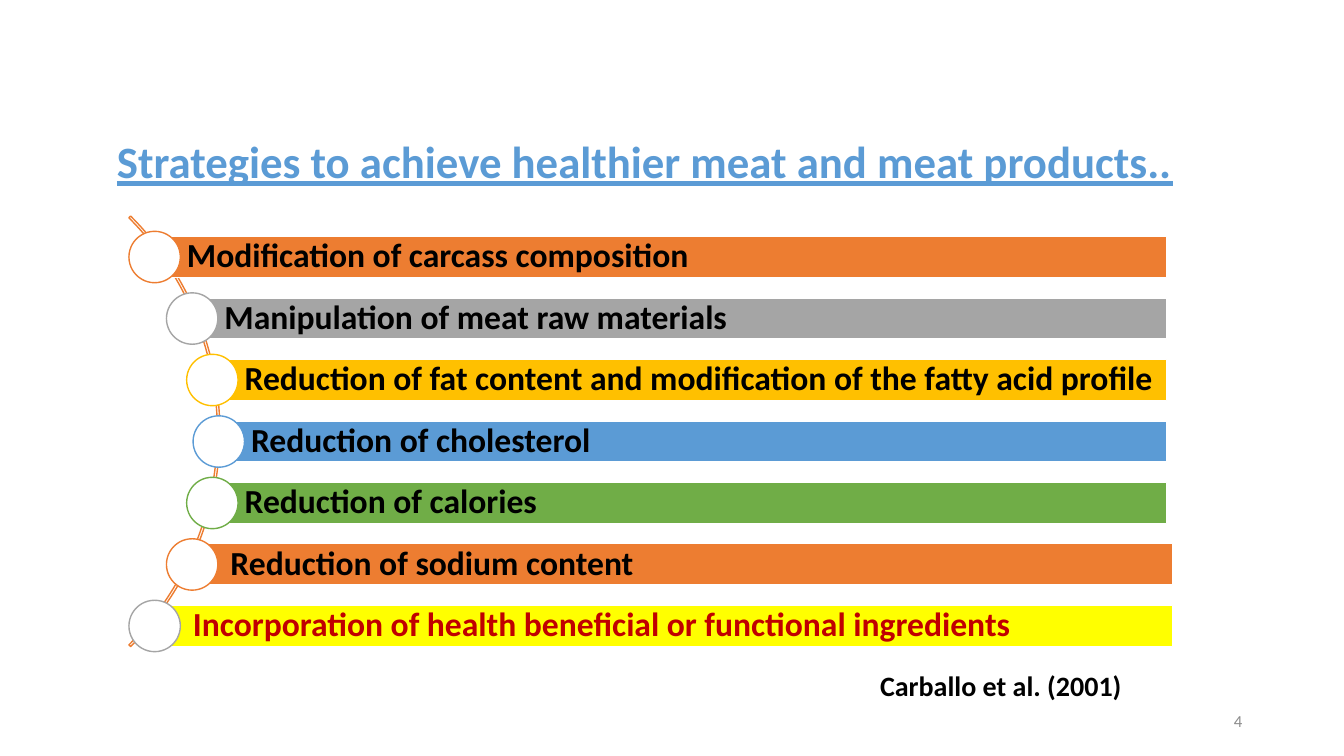
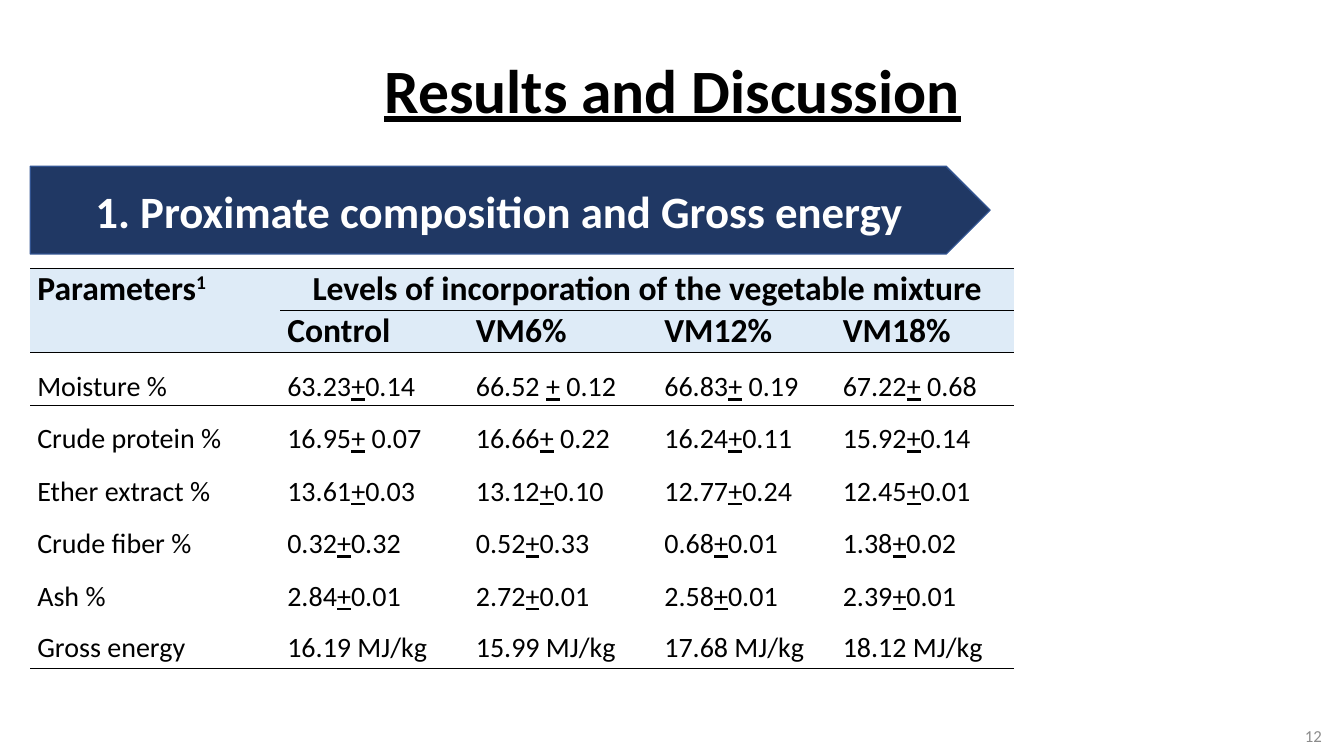
from dataclasses import dataclass
from math import sqrt

from lxml import etree
from pptx import Presentation
from pptx.dml.color import RGBColor
from pptx.enum import shapes, text
from pptx.oxml import ns
from pptx.util import Inches, Pt

SHAPE = shapes.MSO_SHAPE
ALIGN = text.PP_ALIGN
ANCHOR = text.MSO_ANCHOR


@dataclass(frozen=True)
class Theme:
    font: str = "Calibri"
    # Colours
    black: str = "000000"
    white: str = "FFFFFF"
    orange: str = "ED7D31"
    grey: str = "A5A5A5"
    gold: str = "FFC000"
    blue: str = "5B9BD5"
    green: str = "70AD47"
    yellow: str = "FFFF00"
    red: str = "C00000"
    navy: str = "203864"
    navy_edge: str = "325491"
    header_fill: str = "DEEBF7"
    page_grey: str = "8C8C8C"
    # Type sizes
    title: int = 44
    heading: int = 32
    label: int = 24
    body: int = 20
    page: int = 12


class Deck:
    """Holds the style and the current slide."""

    def __init__(self, theme):
        self.theme = theme
        self.prs = Presentation()
        self.prs.slide_width, self.prs.slide_height = Inches(13.33), Inches(7.5)
        self.slide = None

    def new_slide(self):
        self.slide = self.prs.slides.add_slide(self.prs.slide_layouts[5])

    def style(self, paragraph, size, color, bold=False, underline=None,
              align=ALIGN.LEFT, spacing=None):
        paragraph.alignment = align
        if spacing:
            paragraph.line_spacing = spacing
        font = paragraph.font
        font.name, font.size = self.theme.font, Pt(size)
        font.bold, font.underline = bold, underline
        font.color.rgb = RGBColor.from_string(color)

    def set_text(self, shape, words, size, color, anchor=ANCHOR.MIDDLE, **style):
        frame = shape.text_frame
        frame.word_wrap = True
        frame.auto_size = text.MSO_AUTO_SIZE.NONE
        frame.vertical_anchor = anchor
        frame.text = words
        self.style(frame.paragraphs[0], size, color, **style)

    def title(self, words, box, size, color, anchor, align):
        holder = self.slide.shapes.title
        holder.left, holder.top, holder.width, holder.height = map(Inches, box)
        self.set_text(holder, words, size, color, anchor, bold=True,
                      underline=True, align=align, spacing=0.9)

    def label(self, words, box, size, color, **style):
        holder = self.slide.shapes.add_textbox(*map(Inches, box))
        self.set_text(holder, words, size, color, **style)

    def page_number(self, number, left, top):
        self.label(number, (left, top, 3, 0.4), self.theme.page,
                   self.theme.page_grey, align=ALIGN.RIGHT)

    def shape(self, kind, box, fill, line):
        shape = self.slide.shapes.add_shape(kind, *map(Inches, box))
        shape.shadow.inherit = False
        if fill:
            shape.fill.solid()
            shape.fill.fore_color.rgb = RGBColor.from_string(fill)
        else:
            shape.fill.background()
        shape.line.color.rgb = RGBColor.from_string(line)
        shape.line.width = Pt(1)
        return shape

    def bar(self, words, box, fill, color):
        bar = self.shape(SHAPE.RECTANGLE, box, fill, self.theme.white)
        frame = bar.text_frame
        frame.margin_left = Inches(0.32)
        frame.margin_top = frame.margin_right = frame.margin_bottom = Inches(0.07)
        self.set_text(bar, words, self.theme.label, color, bold=True, spacing=0.9)

    def table(self, left, top, widths, heights):
        frame = self.slide.shapes.add_table(
            len(heights), len(widths), Inches(left), Inches(top),
            Inches(sum(widths)), Inches(sum(heights)))
        table = frame.table
        table.first_row = table.horz_banding = False
        # The built-in style without grid or fill
        style_id = frame._element.find(".//" + ns.qn("a:tableStyleId"))
        style_id.text = "{2D5ABB26-0587-4C30-8999-92F81FD0307C}"
        for column, width in zip(table.columns, widths):
            column.width = Inches(width)
        for row, height in zip(table.rows, heights):
            row.height = Inches(height)
        return table

    def cell(self, cell, words, fill=None, edges="", **style):
        cell.margin_left = cell.margin_right = Inches(0.07)
        cell.margin_top = cell.margin_bottom = 0
        if fill:
            cell.fill.solid()
            cell.fill.fore_color.rgb = RGBColor.from_string(fill)
        else:
            cell.fill.background()
        self.rule(cell, edges)
        frame = cell.text_frame
        for i, line in enumerate(words.split("\n")):
            paragraph = frame.paragraphs[0] if i == 0 else frame.add_paragraph()
            self.style(paragraph, **style)
            # An underlined plus stands for plus-minus
            for part in filter(None, line.partition("+")):
                run = paragraph.add_run()
                run.text = part
                if part == "+":
                    run.font.underline = True

    def rule(self, cell, edges):
        properties = cell._tc.get_or_add_tcPr()
        for i, edge in enumerate(edges):
            line = etree.Element(ns.qn(f"a:ln{edge}"), w=str(Pt(1)))
            fill = etree.SubElement(line, ns.qn("a:solidFill"))
            etree.SubElement(fill, ns.qn("a:srgbClr"), val=self.theme.black)
            properties.insert(i, line)


def strategies_slide(deck):
    theme = deck.theme
    deck.new_slide()
    deck.title("Strategies to achieve healthier meat and meat products..",
               (1.06, 1.34, 10.71, 0.6), theme.heading, theme.blue,
               ANCHOR.TOP, ALIGN.LEFT)

    # Curve behind the beads
    curve = deck.shape(SHAPE.BLOCK_ARC, (-3.86, 1.26, 6.04, 6.04), None, theme.orange)
    for i, value in enumerate((189, 27, 0.004)):
        curve.adjustments[i] = value

    # Bars start at beads that follow a circle; the last two sit further right
    strategies = [
        ("Modification of carcass composition", theme.orange, theme.orange, 0),
        ("Manipulation of meat raw materials", theme.grey, theme.grey, 0),
        ("Reduction of fat content and modification of the fatty acid profile",
         theme.gold, theme.gold, 0),
        ("Reduction of cholesterol", theme.blue, theme.blue, 0),
        ("Reduction of calories", theme.green, theme.green, 0),
        ("Reduction of sodium content", theme.orange, theme.orange, 0.06),
        ("Incorporation of health beneficial or functional ingredients",
         theme.yellow, theme.grey, 0.06),
    ]
    radius, step, bead, bar_height = 2.95, 0.61, 0.51, 0.41
    middle_x, middle_y, right = 2.17, 4.38, 11.57
    for i, (words, fill, ring, nudge) in enumerate(strategies):
        drop = (i - len(strategies) // 2) * step
        x = middle_x - radius + sqrt(radius ** 2 - drop ** 2)
        y = middle_y + drop
        color = theme.red if fill == theme.yellow else theme.black
        deck.bar(words, (x + nudge, y - bar_height / 2, right - x, bar_height),
                 fill, color)
        deck.shape(SHAPE.OVAL, (x - bead / 2, y - bead / 2, bead, bead),
                   theme.white, ring)

    # Source and page number
    deck.label("Carballo et al. (2001)", (8.63, 6.58, 4.28, 0.44), theme.body,
               theme.black, bold=True)
    deck.page_number("4", 9.42, 6.95)


def results_slide(deck):
    theme = deck.theme
    deck.new_slide()
    deck.title("Results and Discussion", (0.92, 0.2, 11.5, 1.45), theme.title,
               theme.black, ANCHOR.MIDDLE, ALIGN.CENTER)
    deck.page_number("12", 10.21, 7.1)

    # Section banner
    banner = deck.shape(SHAPE.PENTAGON, (0.3, 1.65, 9.52, 0.87), theme.navy,
                        theme.navy_edge)
    deck.set_text(banner, "1. Proximate composition and Gross energy",
                  theme.heading, theme.white, bold=True, align=ALIGN.CENTER)

    # Table header
    table = deck.table(0.3, 2.66, [2.48, 1.87, 1.87, 1.77, 1.77],
                       [0.42] * 2 + [0.52] * 4 + [1.05])
    table.cell(0, 0).merge(table.cell(1, 0))
    table.cell(0, 1).merge(table.cell(0, 4))
    header = dict(fill=theme.header_fill, edges="TB", size=theme.label,
                  color=theme.black, bold=True)
    deck.cell(table.cell(0, 0), "Parameters", **header)
    deck.rule(table.cell(1, 0), "B")
    note_mark = table.cell(0, 0).text_frame.paragraphs[0].add_run()
    note_mark.text = "1"
    note_mark.font._element.set("baseline", "30000")
    deck.cell(table.cell(0, 1), "Levels of incorporation of the vegetable mixture",
              align=ALIGN.CENTER, **header)
    for column in range(2, 5):
        deck.rule(table.cell(0, column), "TB")
    for column, level in enumerate(("Control", "VM6%", "VM12%", "VM18%"), 1):
        deck.cell(table.cell(1, column), level, **header)

    # Measured values
    measures = [
        ("Moisture %", "63.23+0.14", "66.52 + 0.12", "66.83+ 0.19", "67.22+ 0.68"),
        ("Crude protein %", "16.95+ 0.07", "16.66+ 0.22", "16.24+0.11", "15.92+0.14"),
        ("Ether extract %", "13.61+0.03", "13.12+0.10", "12.77+0.24", "12.45+0.01"),
        ("Crude fiber %", "0.32+0.32", "0.52+0.33", "0.68+0.01", "1.38+0.02"),
        ("Ash %\nGross energy", "2.84+0.01\n16.19 MJ/kg", "2.72+0.01\n15.99 MJ/kg",
         "2.58+0.01\n17.68 MJ/kg", "2.39+0.01\n18.12 MJ/kg"),
    ]
    edges = {0: "T", len(measures) - 1: "B"}
    for row, values in enumerate(measures):
        for column, value in enumerate(values):
            deck.cell(table.cell(row + 2, column), value, edges=edges.get(row, ""),
                      size=theme.body, color=theme.black, spacing=1.5)


def main():
    deck = Deck(Theme())
    strategies_slide(deck)
    results_slide(deck)
    deck.prs.save("out.pptx")


if __name__ == "__main__":
    main()
